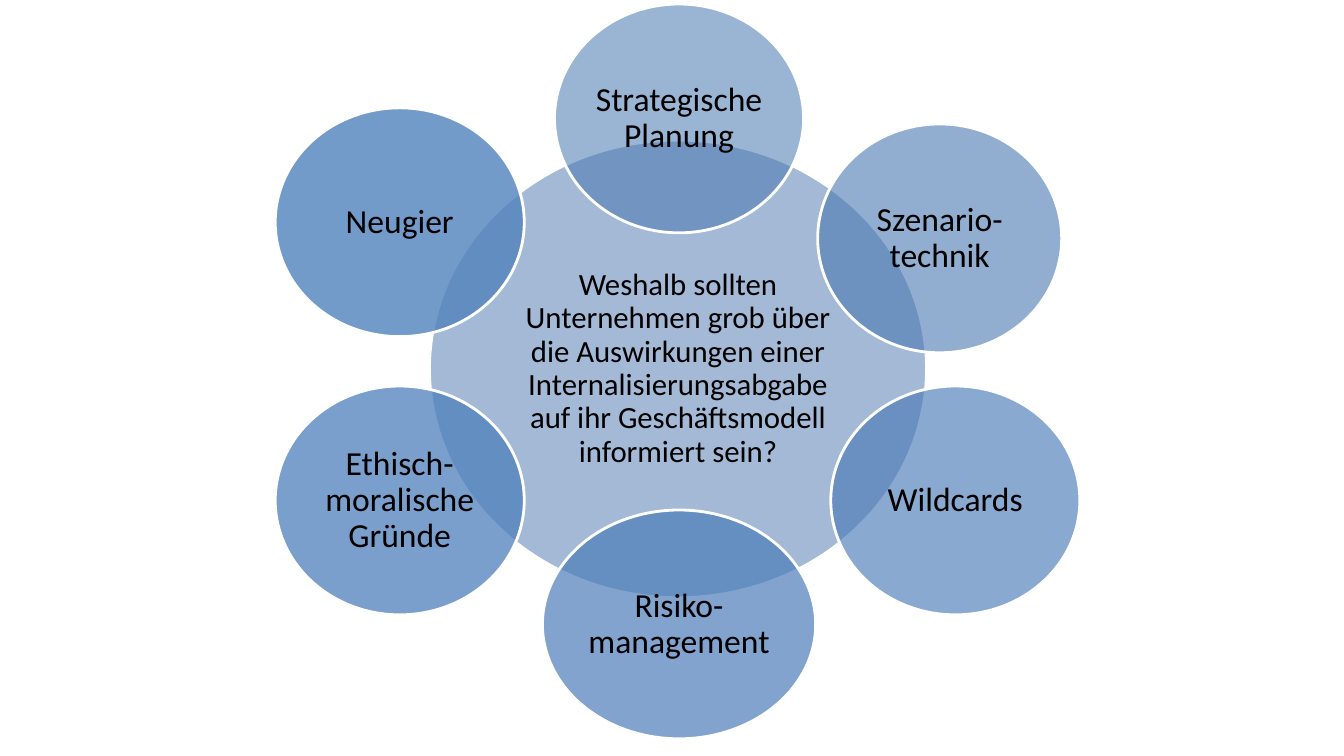
import pptx
import pptx.util
import pptx.dml.color
import pptx.enum.shapes
import pptx.enum.text
import lxml.etree

CORE = ("Weshalb sollten Unternehmen grob über die Auswirkungen einer "
        "Internalisierungsabgabe auf ihr Geschäftsmodell informiert sein?")
HUB = (CORE, 426, 139, 493, 454, "4875AC", 22)
TALL = 227
RING = [
    ("Strategische Planung", 550, 4, 247, "4877AF"),
    ("Szenario-technik", 811, 123, 242, "4979B3"),
    ("Wildcards", 824, 383, 247, "4A7BB7"),
    ("Risiko-management", 538, 506, 271, "4C7DB9"),
    ("Ethisch-moralische Gründe", 273, 383, 247, "4E80BB"),
    ("Neugier", 273, 107, 247, "5182BD"),
]
SCALE = 9144


def px(n):
    return pptx.util.Emu(n * SCALE)


def color(code):
    return pptx.dml.color.RGBColor.from_string(code)


def write(shape, text, size=24, font="Calibri", ink="000000"):
    frame = shape.text_frame
    frame.word_wrap = True
    frame.vertical_anchor = pptx.enum.text.MSO_ANCHOR.MIDDLE
    frame.margin_left = frame.margin_right = px(3)
    frame.margin_top = frame.margin_bottom = px(3)
    para = frame.paragraphs[0]
    para.alignment = pptx.enum.text.PP_ALIGN.CENTER
    para.line_spacing = 0.9
    run = para.add_run()
    run.text = text
    run.font.size = pptx.util.Pt(size)
    run.font.name = font
    run.font.color.rgb = color(ink)


def fade(shape, share):
    tone = shape.fill._xPr.find(".//" + pptx.oxml.ns.qn("a:srgbClr"))
    alpha = lxml.etree.SubElement(tone, pptx.oxml.ns.qn("a:alpha"))
    alpha.set("val", str(share * 1000))


def circle(group, text, left, top, width, height, tint, size, share):
    shape = group.shapes.add_shape(
        pptx.enum.shapes.MSO_SHAPE.OVAL,
        px(left), px(top), px(width), px(height))
    shape.shadow.inherit = False
    shape.fill.solid()
    shape.fill.fore_color.rgb = color(tint)
    fade(shape, share)
    shape.line.color.rgb = color("FFFFFF")
    shape.line.width = pptx.util.Pt(2)
    write(shape, text, size=size)


def main():
    deck = pptx.Presentation()
    deck.slide_width = px(1333)
    deck.slide_height = px(750)
    slide = deck.slides.add_slide(deck.slide_layouts[6])
    group = slide.shapes.add_group_shape()
    rows = [HUB] + [(text, left, top, width, TALL, tint, 24)
                    for text, left, top, width, tint in RING]
    for step, row in enumerate(rows):
        circle(group, *row, share=50 + 5 * step)
    deck.save("out.pptx")


if __name__ == "__main__":
    main()
